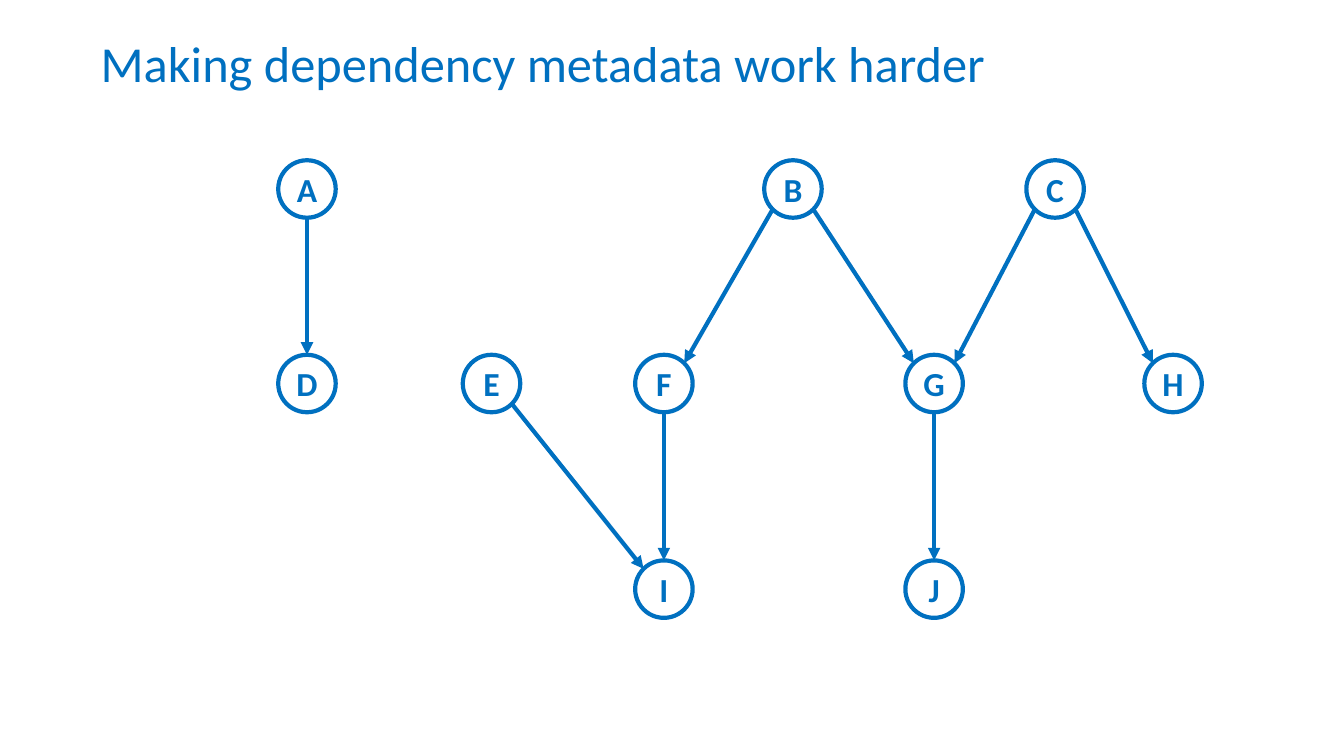
"""Build a slide showing a dependency graph of ten lettered nodes."""
from math import hypot

from lxml import etree
from pptx import Presentation
from pptx.dml.color import RGBColor
from pptx.enum import shapes, text
from pptx.oxml import ns
from pptx.util import Inches, Pt

THEME = {
    "blue": RGBColor(0x00, 0x70, 0xC0),
    "font": "Calibri",
    "title_size": Pt(36),
    "node_size": Pt(24),
    "line_width": Pt(3),
}
DIAMETER = 0.57
RADIUS = DIAMETER / 2
DIAGONAL = RADIUS / hypot(1, 1)
ROW_TOPS = [1.59, 3.52, 5.56]
NODE_ROWS = [
    {"A": 2.76, "B": 7.58, "C": 10.18},
    {"D": 2.76, "E": 4.59, "F": 6.3, "G": 8.98, "H": 11.35},
    {"I": 6.3, "J": 8.98},
]
DEPENDENCIES = ["AD", "BF", "BG", "CG", "CH", "EI", "FI", "GJ"]


def write(frame, wording, size, bold):
    """Put one themed paragraph in a text frame and return it."""
    paragraph = frame.paragraphs[0]
    run = paragraph.add_run()
    run.text = wording
    run.font.color.rgb = THEME["blue"]
    for name, value in {"name": THEME["font"], "size": size, "bold": bold}.items():
        setattr(run.font, name, value)
    return paragraph


def outline(line):
    """Give a line the theme colour and width."""
    line.color.rgb = THEME["blue"]
    line.width = THEME["line_width"]


deck = Presentation()
deck.slide_width, deck.slide_height = Inches(13.33), Inches(7.5)
slide = deck.slides.add_slide(deck.slide_layouts[6])

title = slide.shapes.add_textbox(Inches(0.9), Inches(0.35), Inches(9.63), Inches(0.62))
title.text_frame.word_wrap = True
title.text_frame.vertical_anchor = text.MSO_ANCHOR.MIDDLE
heading = write(title.text_frame, "Making dependency metadata work harder",
                THEME["title_size"], False)
for name, value in {"line_spacing": 0.9, "space_before": Pt(10)}.items():
    setattr(heading, name, value)

centres = {}
for top, row in zip(ROW_TOPS, NODE_ROWS):
    for letter, left in row.items():
        node = slide.shapes.add_shape(shapes.MSO_SHAPE.OVAL, Inches(left), Inches(top),
                                      Inches(DIAMETER), Inches(DIAMETER))
        node.shadow.inherit = False
        node.fill.background()
        outline(node.line)
        label = node.text_frame
        for name in ("margin_left", "margin_right", "margin_top", "margin_bottom"):
            setattr(label, name, 0)
        label.vertical_anchor = text.MSO_ANCHOR.MIDDLE
        write(label, letter, THEME["node_size"], True).alignment = text.PP_ALIGN.CENTER
        centres[letter] = (left + RADIUS, top + RADIUS)

for parent, child in DEPENDENCIES:
    (start_x, start_y), (end_x, end_y) = centres[parent], centres[child]
    side = (end_x > start_x) - (end_x < start_x)
    shift = side * DIAGONAL
    drop = DIAGONAL if side else RADIUS
    arrow = slide.shapes.add_connector(
        shapes.MSO_CONNECTOR.STRAIGHT,
        Inches(start_x + shift), Inches(start_y + drop),
        Inches(end_x - shift), Inches(end_y - drop))
    outline(arrow.line)
    etree.SubElement(arrow.line._get_or_add_ln(), ns.qn("a:tailEnd"), type="triangle")
    etree.SubElement(arrow._element.spPr, ns.qn("a:effectLst"))

deck.save("out.pptx")
